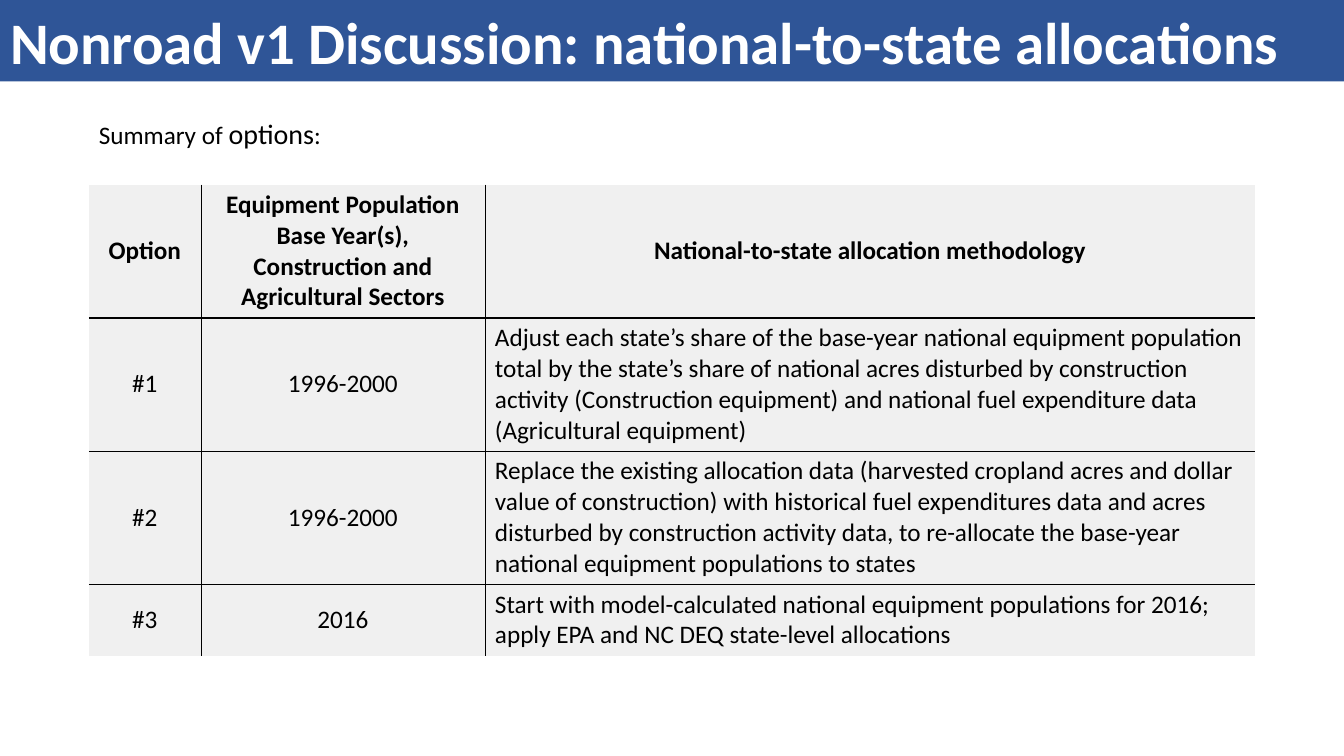
from lxml import etree
from pptx import Presentation
from pptx.dml.color import RGBColor
from pptx.enum.text import MSO_ANCHOR, MSO_AUTO_SIZE, PP_ALIGN
from pptx.oxml.ns import qn
from pptx.util import Cm, Pt

LEFT, CENTER = PP_ALIGN.LEFT, PP_ALIGN.CENTER
MIDDLE = MSO_ANCHOR.MIDDLE
NO_FIT, GROW = MSO_AUTO_SIZE.NONE, MSO_AUTO_SIZE.SHAPE_TO_FIT_TEXT
TITLE_ONLY = 5

BLUE, GREY, BLACK, WHITE = "2F5597", "F0F0F0", "000000", "FFFFFF"
THIN, THICK = 0.25, 1.5

COLUMN_WIDTHS = [2.82, 7.16, 19.41]
ROW_HEIGHTS = [3.3, 3.3, 3.3, 1.8]
OPTIONS = [
    ("Option",
     "Equipment Population Base Year(s), Construction and Agricultural Sectors",
     "National-to-state allocation methodology"),
    ("#1", "1996-2000",
     "Adjust each state’s share of the base-year national equipment population "
     "total by the state’s share of national acres disturbed by construction "
     "activity (Construction equipment) and national fuel expenditure data "
     "(Agricultural equipment)"),
    ("#2", "1996-2000",
     "Replace the existing allocation data (harvested cropland acres and dollar "
     "value of construction) with historical fuel expenditures data and acres "
     "disturbed by construction activity data, to re-allocate the base-year "
     "national equipment populations to states"),
    ("#3", "2016",
     "Start with model-calculated national equipment populations for 2016; "
     "apply EPA and NC DEQ state-level allocations"),
]


def set_all(target, values):
    for name, value in values.items():
        setattr(target, name, value)


def paint(color_format, color):
    color_format.rgb = RGBColor.from_string(color)


def fill(part, color):
    part.fill.solid()
    paint(part.fill.fore_color, color)


def write(paragraph, text, size, color=BLACK, bold=False):
    run = paragraph.add_run()
    run.text = text
    set_all(run.font, {"name": "Calibri", "size": Pt(size), "bold": bold})
    paint(run.font.color, color)


def add_title(slide, text):
    title = slide.shapes.title
    set_all(title, {"left": Cm(0), "top": Cm(0),
                    "width": Cm(33.87), "height": Cm(2.05)})
    fill(title, BLUE)
    set_all(title.text_frame, {"vertical_anchor": MIDDLE, "word_wrap": True,
                               "auto_size": NO_FIT})
    heading = title.text_frame.paragraphs[0]
    heading.alignment = LEFT
    write(heading, text, 42, WHITE, True)


def add_caption(slide, pieces):
    caption = slide.shapes.add_textbox(Cm(2.24), Cm(2.8), Cm(6.3), Cm(1.12))
    set_all(caption.text_frame, {"word_wrap": False, "auto_size": GROW})
    for text, size in pieces:
        write(caption.text_frame.paragraphs[0], text, size)


def add_border(cell, side, width):
    line = etree.SubElement(cell._tc.get_or_add_tcPr(), qn(f"a:ln{side}"))
    if not width:
        etree.SubElement(line, qn("a:noFill"))
        return
    line.set("w", str(Pt(width)))
    solid = etree.SubElement(line, qn("a:solidFill"))
    etree.SubElement(solid, qn("a:srgbClr"), val=BLACK)


def inner_borders(row, column):
    last_row, last_column = len(ROW_HEIGHTS) - 1, len(COLUMN_WIDTHS) - 1
    return {
        "L": THIN if column > 0 else 0,
        "R": THIN if column < last_column else 0,
        "T": (0, THICK)[row] if row < 2 else THIN,
        "B": THICK if row == 0 else THIN if row < last_row else 0,
    }


def format_cell(cell, text, row, column):
    for side, width in inner_borders(row, column).items():
        add_border(cell, side, width)
    fill(cell, GREY)
    cell.vertical_anchor = MIDDLE
    is_header = row == 0
    paragraph = cell.text_frame.paragraphs[0]
    paragraph.alignment = CENTER if is_header or column < 2 else LEFT
    write(paragraph, text, 18, bold=is_header)


def add_options_table(slide):
    table = slide.shapes.add_table(
        len(ROW_HEIGHTS), len(COLUMN_WIDTHS), Cm(2.24), Cm(4.65),
        Cm(sum(COLUMN_WIDTHS)), Cm(sum(ROW_HEIGHTS))).table
    table.horz_banding = False
    for column, width in zip(table.columns, COLUMN_WIDTHS):
        column.width = Cm(width)
    for row, height in zip(table.rows, ROW_HEIGHTS):
        row.height = Cm(height)
    for row, texts in enumerate(OPTIONS):
        for column, text in enumerate(texts):
            format_cell(table.cell(row, column), text, row, column)


def main():
    deck = Presentation()
    set_all(deck, {"slide_width": Cm(33.87), "slide_height": Cm(19.05)})
    slide = deck.slides.add_slide(deck.slide_layouts[TITLE_ONLY])
    add_title(slide, "Nonroad v1 Discussion: national-to-state allocations")
    add_options_table(slide)
    add_caption(slide, [("Summary of ", 18), ("options", 20), (":", 18)])
    deck.save("out.pptx")


if __name__ == "__main__":
    main()
